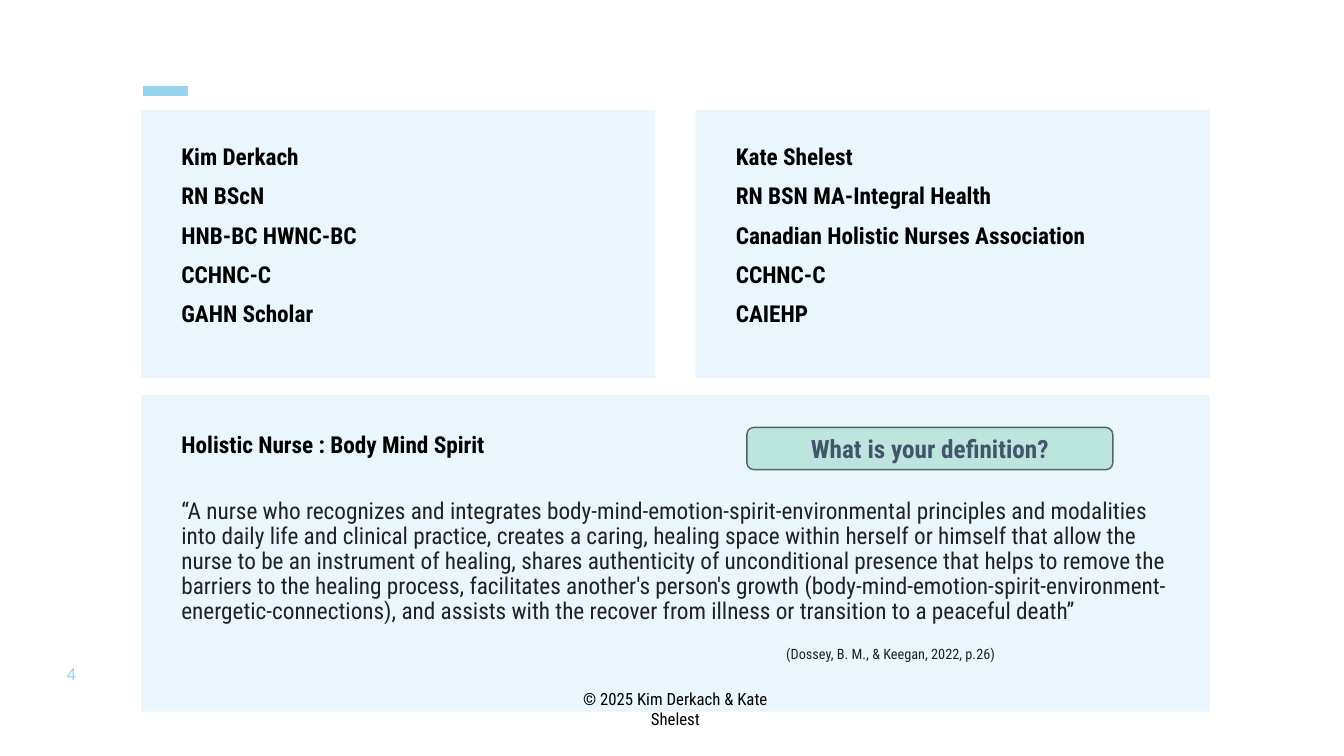
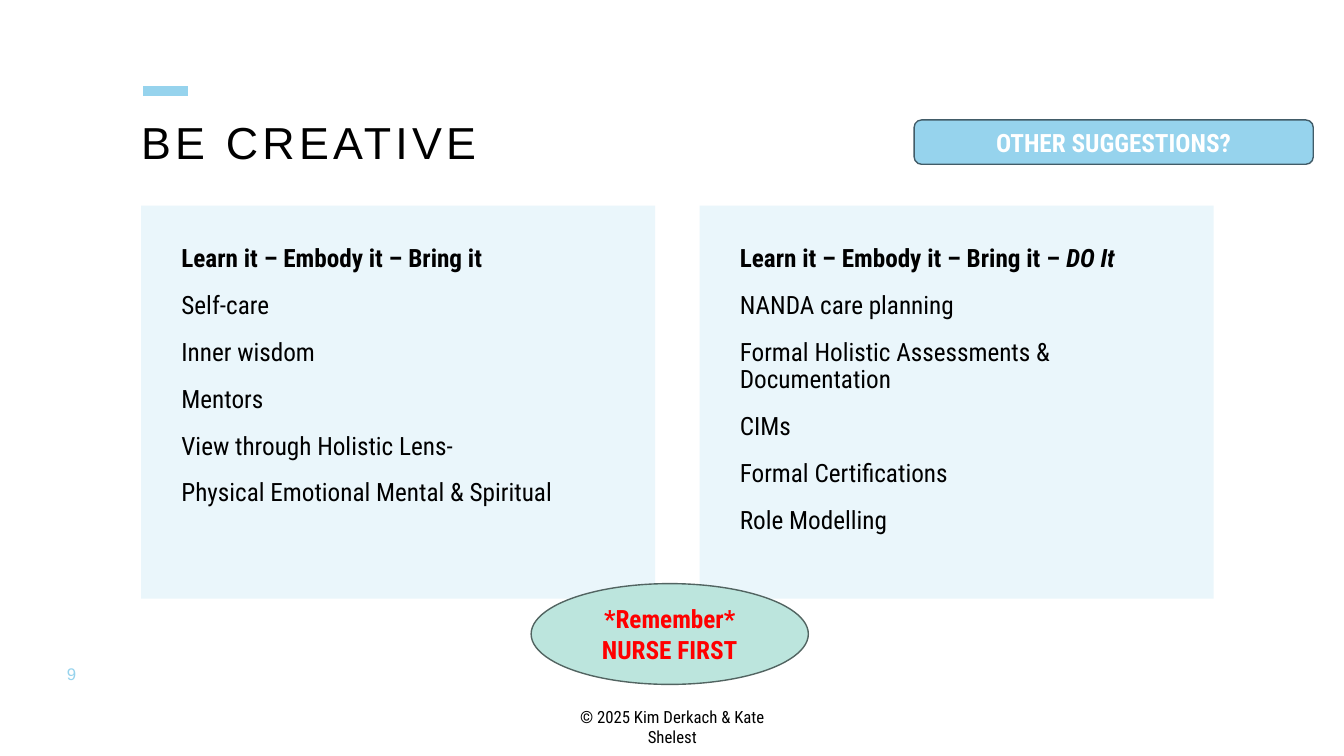
from dataclasses import dataclass

from lxml.etree import SubElement
from pptx import Presentation
from pptx.dml.color import RGBColor
from pptx.enum.shapes import MSO_CONNECTOR as Connector, MSO_SHAPE as Shape
from pptx.enum.text import MSO_ANCHOR as Anchor, PP_ALIGN as Align
from pptx.oxml.ns import qn
from pptx.util import Pt


@dataclass(frozen=True)
class Theme:
    body_font: str = "Roboto Condensed"
    title_font: str = "Arial"
    ink: str = "000000"
    quote: str = "222222"
    panel: str = "EAF6FB"
    sky: str = "96D3ED"
    sky_edge: str = "425C68"
    mint: str = "BCE5DD"
    mint_edge: str = "526461"
    slate: str = "44546A"
    white: str = "FFFFFF"
    alert: str = "FF0000"
    title_size: float = 32
    large: float = 18
    medium: float = 16.6
    small: float = 12
    citation: float = 10.2


THEME = Theme()
LEFT = 100.8
COLUMN_WIDTH = 367.2
PADDING = 28.8
PARAGRAPH_GAP = 14

PRESENTERS = [
    ["Kim Derkach", "RN BScN", "HNB-BC HWNC-BC", "CCHNC-C", "GAHN Scholar"],
    ["Kate Shelest", "RN BSN MA-Integral Health",
     "Canadian Holistic Nurses Association", "CCHNC-C", "CAIEHP"],
]
DEFINITION_HEADING = "Holistic Nurse : Body Mind Spirit"
DEFINITION = (
    "“A nurse who recognizes and integrates body-mind-emotion-spirit-environmental "
    "principles and modalities into daily life and clinical practice, creates a caring, "
    "healing space within herself or himself that allow the nurse to be an instrument of "
    "healing, shares authenticity of unconditional presence that helps to remove the "
    "barriers to the healing process, facilitates another's person's growth "
    "(body-mind-emotion-spirit-environment-energetic-connections), and assists with the "
    "recover from illness or transition to a peaceful death”"
)
CITATION = "(Dossey, B. M., & Keegan, 2022, p.26)"
DEFINITION_PROMPT = "What is your definition?"

CREATIVE_TITLE = "BE CREATIVE"
PRACTICES = [
    ("Learn it – Embody it – Bring it", "",
     ["Self-care", "Inner wisdom", "Mentors", "View through Holistic Lens-",
      "Physical Emotional Mental & Spiritual"]),
    ("Learn it – Embody it – Bring it – ", "DO It",
     ["NANDA care planning", "Formal Holistic Assessments & Documentation", "CIMs",
      "Formal Certifications", "Role Modelling"]),
]
REMINDER = ["*Remember*", "NURSE FIRST"]
SUGGESTIONS_PROMPT = "OTHER SUGGESTIONS?"
COPYRIGHT = "© 2025 Kim Derkach & Kate Shelest"


def write(frame, text, size=THEME.large, color=THEME.ink, font=THEME.body_font,
          bold=False, italic=False, align=Align.LEFT, leading=1.0, before=0,
          indent=0, tracking=0, same_line=False):
    paragraph = frame.paragraphs[-1]
    if paragraph.runs and not same_line:
        paragraph = frame.add_paragraph()
    paragraph.alignment = align
    paragraph.line_spacing = leading
    paragraph.space_before = Pt(before)
    if indent:
        paragraph._p.get_or_add_pPr().set("marL", str(Pt(indent)))
    run = paragraph.add_run()
    run.text = text
    run.font.name = font
    run.font.size = Pt(size)
    run.font.bold = bold
    run.font.italic = italic
    run.font.color.rgb = RGBColor.from_string(color)
    if tracking:
        run._r.get_or_add_rPr().set("spc", str(tracking * 100))


def prepare(frame, anchor=Anchor.TOP, padding=None):
    frame.word_wrap = True
    frame.vertical_anchor = anchor
    if padding is not None:
        frame.margin_left = frame.margin_right = Pt(padding)
        frame.margin_top = frame.margin_bottom = Pt(padding)
    return frame


def add_label(slide, box, anchor=Anchor.TOP, padding=None):
    label = slide.shapes.add_textbox(*map(Pt, box))
    return prepare(label.text_frame, anchor, padding)


def add_block(slide, kind, box, fill, edge=None, anchor=Anchor.MIDDLE, padding=None):
    block = slide.shapes.add_shape(kind, *map(Pt, box))
    block.shadow.inherit = False
    block.fill.solid()
    block.fill.fore_color.rgb = RGBColor.from_string(fill)
    if edge:
        block.line.color.rgb = RGBColor.from_string(edge)
        block.line.width = Pt(1)
    else:
        block.line.fill.background()
    return prepare(block.text_frame, anchor, padding)


def add_panel(slide, box):
    return add_block(slide, Shape.RECTANGLE, box, THEME.panel,
                     anchor=Anchor.TOP, padding=PADDING)


def add_columns(slide, top, height, gap, count):
    return [add_panel(slide, (LEFT + i * (COLUMN_WIDTH + gap), top, COLUMN_WIDTH, height))
            for i in range(count)]


def add_callout(slide, kind, box, lines, fill, edge, color):
    callout = add_block(slide, kind, box, fill, edge)
    for line in lines:
        write(callout, line, color=color, bold=True, align=Align.CENTER)


def start_slide(deck):
    slide = deck.slides.add_slide(deck.slide_layouts[6])
    accent = slide.shapes.add_connector(
        Connector.STRAIGHT, Pt(102.2), Pt(64.8), Pt(134.6), Pt(64.8))
    accent.line.color.rgb = RGBColor.from_string(THEME.sky)
    accent.line.width = Pt(7)
    SubElement(accent._element.spPr, qn("a:effectLst"))
    return slide


def add_footer(slide, number, left, top):
    page = add_label(slide, (33.1, 473.8, 36, 14.4), Anchor.MIDDLE, 0)
    write(page, number, size=THEME.small, color=THEME.sky, font=THEME.title_font,
          align=Align.CENTER, tracking=2)
    write(add_label(slide, (left, top, 175.7, 21.6)), COPYRIGHT,
          size=THEME.small, align=Align.CENTER)


def build_presenters(deck):
    slide = start_slide(deck)
    columns = add_columns(slide, 78.5, 191.5, 28.8, len(PRESENTERS))
    for column, credentials in zip(columns, PRESENTERS):
        for credential in credentials:
            write(column, credential, size=THEME.medium, bold=True,
                  leading=0.7, before=PARAGRAPH_GAP)

    definition = add_panel(slide, (LEFT, 282.2, 763.2, 226.1))
    write(definition, DEFINITION_HEADING, size=THEME.medium, bold=True,
          leading=0.8, before=PARAGRAPH_GAP)
    write(definition, DEFINITION, size=THEME.medium, color=THEME.quote,
          leading=0.9, before=29.6)
    write(definition, CITATION, size=THEME.citation, color=THEME.quote,
          leading=0.9, before=15.9, indent=432)
    add_callout(slide, Shape.ROUNDED_RECTANGLE, (533.5, 305.3, 261.4, 30.2),
                [DEFINITION_PROMPT], THEME.mint, THEME.mint_edge, THEME.slate)
    add_footer(slide, "4", 394.6, 488.2)


def build_creative(deck):
    slide = start_slide(deck)
    write(add_label(slide, (LEFT, 86.4, 773.3, 72), padding=0), CREATIVE_TITLE,
          size=THEME.title_size, font=THEME.title_font, leading=0.9, tracking=3)
    columns = add_columns(slide, 146.9, 280.8, 31.7, len(PRACTICES))
    for column, (heading, emphasis, practices) in zip(columns, PRACTICES):
        spacing = dict(leading=0.9, before=PARAGRAPH_GAP)
        write(column, heading, bold=True, **spacing)
        if emphasis:
            write(column, emphasis, bold=True, italic=True, same_line=True, **spacing)
        for practice in practices:
            write(column, practice, **spacing)

    add_callout(slide, Shape.OVAL, (379.4, 416.9, 198, 72),
                REMINDER, THEME.mint, THEME.mint_edge, THEME.alert)
    add_footer(slide, "9", 392.4, 501.1)
    add_callout(slide, Shape.ROUNDED_RECTANGLE, (653, 85.7, 285.1, 31.7),
                [SUGGESTIONS_PROMPT], THEME.sky, THEME.sky_edge, THEME.white)


def main():
    deck = Presentation()
    deck.slide_width, deck.slide_height = Pt(960), Pt(540)
    build_presenters(deck)
    build_creative(deck)
    deck.save("out.pptx")


if __name__ == "__main__":
    main()
